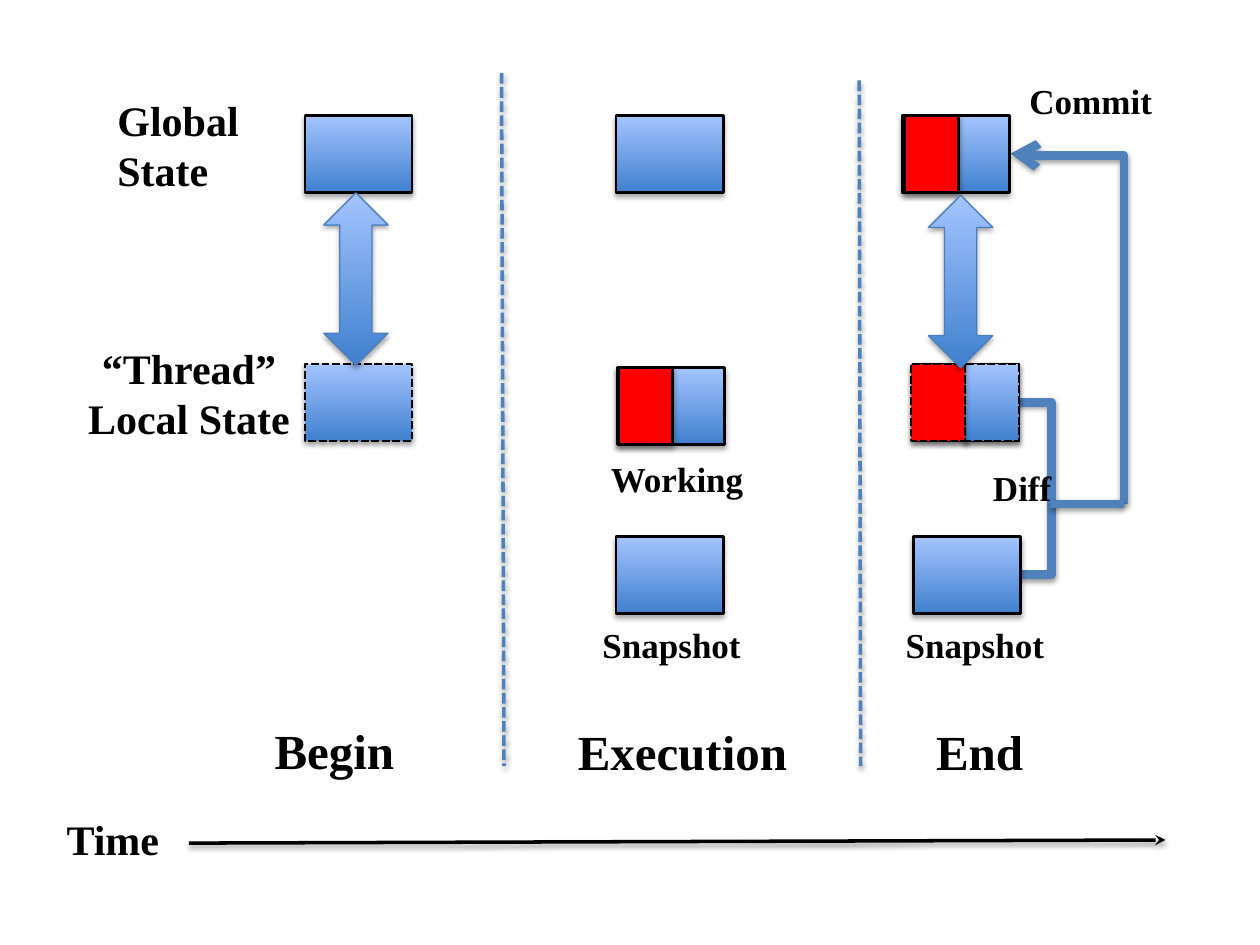
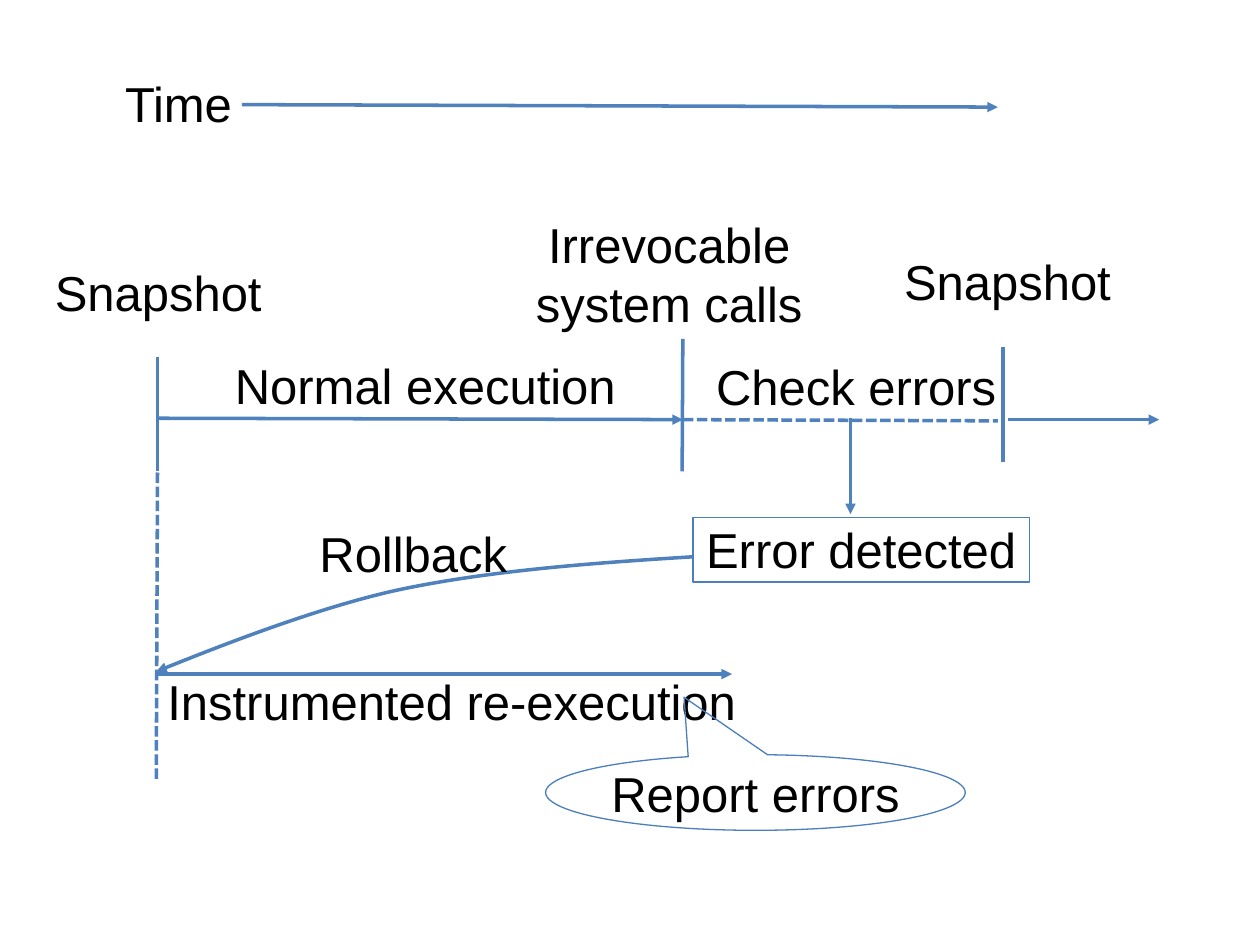
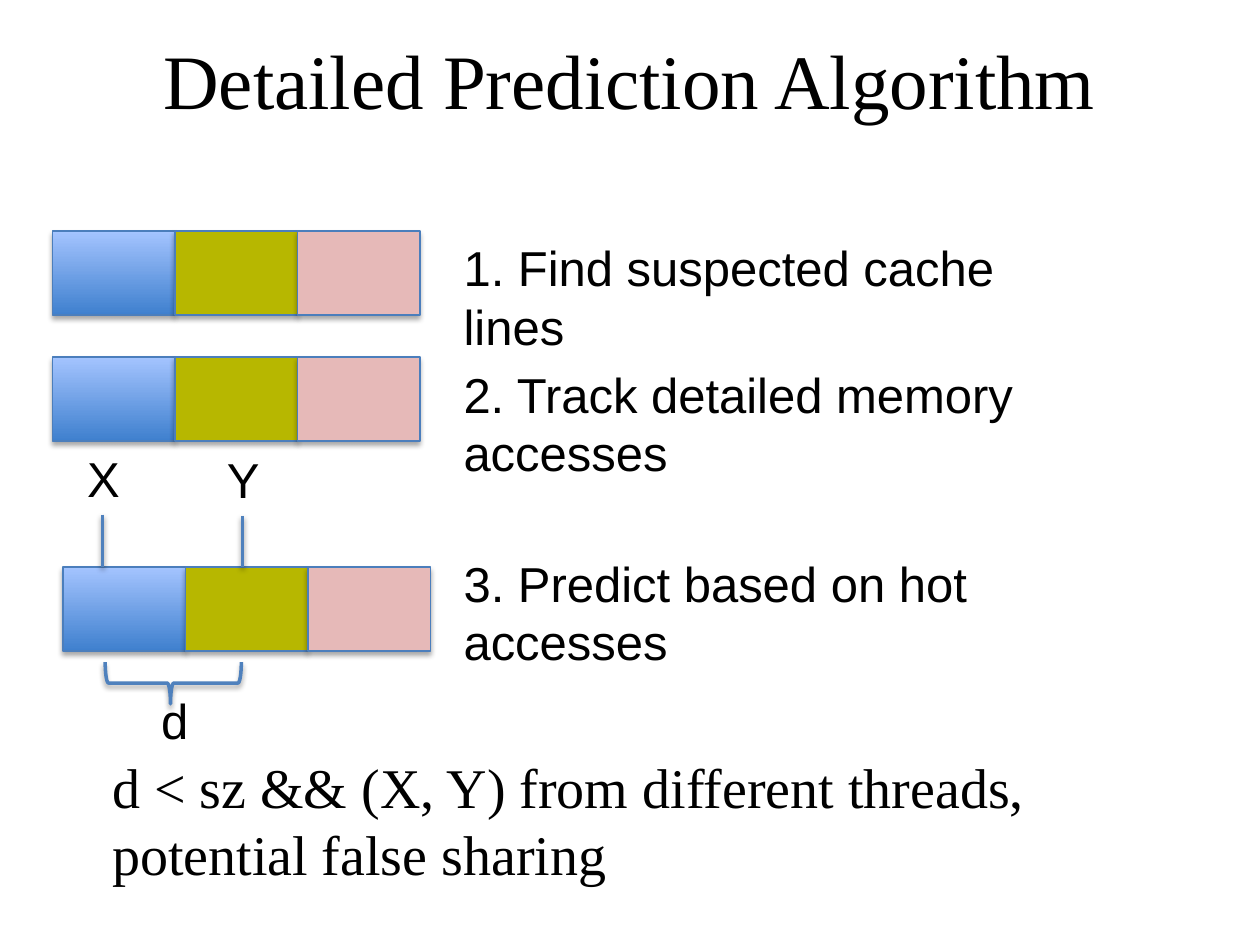
from dataclasses import dataclass

from pptx import Presentation
from pptx.dml.color import RGBColor
from pptx.enum.dml import MSO_LINE_DASH_STYLE as Dash
from pptx.enum.shapes import MSO_CONNECTOR_TYPE as Conn, MSO_SHAPE as Shape
from pptx.enum.text import MSO_ANCHOR as Anchor, PP_ALIGN as Align
from pptx.oxml import parse_xml
from pptx.oxml.ns import nsdecls, qn
from pptx.oxml.xmlchemy import OxmlElement
from pptx.util import Pt


@dataclass(frozen=True)
class Theme:
    ink: str = "000000"
    paper: str = "FFFFFF"
    accent: str = "4F81BD"
    edge: str = "4B7EBC"
    changed: str = "FF0000"
    olive: str = "B7B700"
    pink: str = "E6B9B8"
    blend: tuple = ("3F80CE", "A4C4FF")  # bottom, top
    serif: str = "Times New Roman"
    sans: str = "Arial"
    title: int = 44
    rule: int = 32
    body: int = 28
    label: int = 24
    note: int = 20
    shadow: str = (
        f'<a:effectLst {nsdecls("a")}><a:outerShdw blurRad="{Pt(3.1)}" dist="%d" '
        'dir="5400000" rotWithShape="0"><a:srgbClr val="000000">'
        '<a:alpha val="%d"/></a:srgbClr></a:outerShdw></a:effectLst>')


T = Theme()
INSET = (7.2, 3.6, 7.2, 3.6)
TIGHT = (0, 1.4, 0, 3.6)
SIDES = ("margin_left", "margin_top", "margin_right", "margin_bottom")


def block(s, at, text="", shape=None, fill=None, line=None, width=0.75, dash=None,
          shadow=False, size=T.body, font=T.sans, bold=False, align=Align.CENTER,
          anchor=Anchor.TOP, inset=INSET):
    """Add a preset shape, or a text box when no shape is given."""
    at = [Pt(v) for v in at]
    if shape is None:
        sp = s.shapes.add_textbox(*at)
    else:
        sp = s.shapes.add_shape(shape, *at)
        sp.shadow.inherit = False
        if fill == T.blend:
            sp.fill.gradient()
            sp.fill.gradient_angle = 90
            for stop, color in zip(sp.fill.gradient_stops, fill):
                stop.color.rgb = RGBColor.from_string(color)
        elif fill:
            sp.fill.solid()
            sp.fill.fore_color.rgb = RGBColor.from_string(fill)
        else:
            sp.fill.background()
        sp.line.color.rgb = RGBColor.from_string(line)
        sp.line.width = Pt(width)
        sp.line.dash_style = dash
        if shadow:
            effects = sp._element.spPr.find(qn("a:effectLst"))
            effects.append(parse_xml(T.shadow % (Pt(1.8), 35000))[0])
    if text:
        tf = sp.text_frame
        tf.text = text
        frame = {"word_wrap": True, "vertical_anchor": anchor}
        frame.update(zip(SIDES, map(Pt, inset)))
        for name, value in frame.items():
            setattr(tf, name, value)
        for p in tf.paragraphs:
            p.alignment = align
            for name, value in {"name": font, "size": Pt(size), "bold": bold}.items():
                setattr(p.runs[0].font, name, value)
            p.runs[0].font.color.rgb = RGBColor.from_string(T.ink)
    return sp


def link(s, ends, head=None, color=T.accent, width=2, dash=None, shadow=False,
         kind=Conn.STRAIGHT):
    """Add a connector from (x1, y1) to (x2, y2)."""
    sp = s.shapes.add_connector(kind, *[Pt(v) for v in ends])
    sp.line.color.rgb = RGBColor.from_string(color)
    sp.line.width = Pt(width)
    sp.line.dash_style = dash
    if head:
        tail = OxmlElement("a:tailEnd")
        tail.set("type", head)
        sp.line._get_or_add_ln().append(tail)
    effects = parse_xml(T.shadow % (Pt(1.6), 38000))
    if not shadow:
        effects.remove(effects[0])
    sp._element.spPr.append(effects)
    return sp


prs = Presentation()
prs.slide_width, prs.slide_height = Pt(720), Pt(540)
blank = prs.slide_layouts[6]

# ---- Slide 1: phases of a thread
s = prs.slides.add_slide(blank)

# Phase dividers and time axis
for ends in ((491, 46, 491.8, 437.8), (286.6, 41.8, 288, 437.8)):
    link(s, ends, dash=Dash.SQUARE_DOT, shadow=True)
link(s, (108, 481.8, 666, 480), "stealth", T.ink, shadow=True)

# Diff and commit paths, turned a quarter
elbows = [
    ((632.1, 278.6, 533.5, 279.5), None, "bentConnector4", (300, 2051800)),
    ((509.8, 220.3, 710, 155.5), "arrow", "bentConnector3", (99400,)),
]
for ends, head, preset, adjustments in elbows:
    sp = link(s, ends, head, width=5, shadow=True, kind=Conn.ELBOW)
    sp._element.spPr.find(qn("a:xfrm")).set("rot", "16200000")
    geom = sp._element.spPr.find(qn("a:prstGeom"))
    geom.set("prst", preset)
    guides = geom.find(qn("a:avLst"))
    for i, value in enumerate(adjustments, 1):
        gd = OxmlElement("a:gd")
        gd.set("name", f"adj{i}")
        gd.set("fmla", f"val {value}")
        guides.append(gd)
link(s, (600, 288, 642.2, 288), width=5, shadow=True)

# Memory states
full, half, tall = 61.2, 30.8, 44
top, local, snap = 66.2, 208.1, 306.7
states = [
    (174.2, top, full, T.blend, None),
    (174.2, local, full, T.blend, Dash.SQUARE_DOT),
    (352.1, top, full, T.blend, None),
    (352.8, 210.2, full, T.blend, None),
    (353.5, 210.2, half, T.changed, None),
    (352.1, snap, full, T.blend, None),
    (515.5, top, full, T.blend, None),
    (517, top, half, T.changed, None),
    (551.5, local, half, T.blend, None),
    (522, local, half, T.changed, None),
    (551.5, local, half, T.blend, Dash.SQUARE_DOT),
    (520.6, local, half, T.changed, Dash.SQUARE_DOT),
    (522, snap, full, T.blend, None),
]
for x, y, w, fill, dash in states:
    block(s, (x, y, w, tall), shape=Shape.RECTANGLE, fill=fill, line=T.ink,
          width=1.5, dash=dash, shadow=True)
for x, y in ((185, 110.2), (530.6, 111.6)):
    block(s, (x, y, 36.8, 98.6), shape=Shape.UP_DOWN_ARROW, fill=T.blend,
          line=T.edge, shadow=True)

# Labels
flush = (0, 3.6, 0, 3.6)
labels = [
    ("End", (527.8, 409, 96, 41), T.body, Align.LEFT, INSET),
    ("Begin", (149.8, 408.2, 114, 41), T.body, Align.LEFT, INSET),
    ("Execution", (300, 409, 180, 41), T.body, Align.CENTER, INSET),
    ("Time", (18, 461.5, 93, 36), T.label, Align.CENTER, INSET),
    ("Global State", (60, 50.4, 102, 65.5), T.label, Align.LEFT, INSET),
    ("“Thread”\nLocal State", (36, 192.2, 144, 65.5), T.label, Align.CENTER, INSET),
    ("Diff", (567.4, 262.8, 57, 31.7), T.note, Align.LEFT, flush),
    ("Commit", (588.2, 41.8, 90, 31.7), T.note, Align.LEFT, flush),
    ("Working", (342, 257.8, 114, 31.7), T.note, Align.LEFT, INSET),
    ("Snapshot", (329.8, 352.8, 108, 31.7), T.note, Align.CENTER, INSET),
    ("Snapshot", (510.5, 352.8, 119.5, 31.7), T.note, Align.LEFT, INSET),
]
for text, at, size, align, inset in labels:
    block(s, at, text, size=size, font=T.serif, bold=True, align=align, inset=inset)

# ---- Slide 2: rollback timeline
s = prs.slides.add_slide(blank)

# Time marks and flows
marks = [
    ((90, 203.8, 90, 269.3), None),
    ((390.2, 193.7, 389.8, 269.3), None),
    ((573.1, 198, 573.1, 264.2), None),
    ((90, 270, 89.3, 446.4), Dash.SQUARE_DOT),
    ((390.2, 239.8, 570.2, 240.5), Dash.SQUARE_DOT),
]
for ends, dash in marks:
    link(s, ends, dash=dash)
flows = [
    (138.2, 59.8, 570.2, 61.2),
    (90, 239, 390.2, 239.8),
    (576, 239.8, 662.4, 239.8),
    (486, 239, 486, 293.8),
    (90, 385.2, 418.3, 385.2),
]
for ends in flows:
    link(s, ends, "triangle")

# Rollback curve: each three points after the start make one Bezier segment
start, *points = [(396, 318.2), (337.7, 321.8), (279.4, 326.2), (228.2, 337),
                  (177.8, 347.8), (89.3, 383.8), (89.3, 383.8)]
fb = s.shapes.build_freeform(Pt(start[0]), Pt(start[1]))
fb.add_line_segments([(Pt(x), Pt(y)) for x, y in points], close=False)
sp = fb.convert_to_shape()
sp.shadow.inherit = False
sp.fill.background()
sp.line.color.rgb = RGBColor.from_string(T.accent)
sp.line.width = Pt(2)
tail = OxmlElement("a:tailEnd")
tail.set("type", "triangle")
sp.line._get_or_add_ln().append(tail)
outline = sp._element.find(".//" + qn("a:path"))
legs = outline.findall(qn("a:lnTo"))
for i in range(0, len(legs), 3):
    curve = OxmlElement("a:cubicBezTo")
    for leg in legs[i:i + 3]:
        curve.append(leg[0])
        outline.remove(leg)
    outline.append(curve)

# Labels
captions = [
    ("Time", (54, 41.8, 96, 36)),
    ("Snapshot", (18, 144, 144.7, 47.5)),
    ("Snapshot", (503.3, 131.8, 144.7, 59.8)),
    ("Normal execution", (90, 203, 306, 36)),
    ("Check errors", (408.2, 203, 162, 36.7)),
    ("Rollback", (176.4, 300.2, 119.5, 33.8)),
    ("Instrumented re-execution", (90, 383.8, 336.2, 36)),
]
for text, at in captions:
    block(s, at, text, anchor=Anchor.MIDDLE, inset=TIGHT)
sp = block(s, (306, 120.2, 167.8, 74.2), "Irrevocable\nsystem calls",
           anchor=Anchor.MIDDLE, inset=TIGHT)
sp.text_frame.paragraphs[0]._p.get_or_add_pPr().set("marR", str(Pt(15)))

# Outcome boxes
block(s, (396, 295.9, 192.2, 36.7), "Error detected", Shape.RECTANGLE, T.paper,
      T.edge, anchor=Anchor.MIDDLE, inset=(7.2, 2.9, 7.2, 3.6))
sp = block(s, (311.8, 431.3, 239.8, 43.2), "Report errors", Shape.OVAL_CALLOUT,
           line=T.edge, anchor=Anchor.MIDDLE, inset=flush)
sp.adjustments[0], sp.adjustments[1] = -0.17, -1.26

# ---- Slide 3: prediction algorithm
s = prs.slides.add_slide(blank)
block(s, (0, 0, 720, 90), "Detailed Prediction Algorithm", size=T.title,
      font=T.serif, anchor=Anchor.MIDDLE)

# Cache lines of three words
word = 70
for x, y in ((30, 132), (30, 204), (36, 324)):
    for i, fill in enumerate((T.blend, T.olive, T.pink)):
        block(s, (x + i * word, y, word, 48), shape=Shape.RECTANGLE, fill=fill,
              line=T.edge, shadow=True)

# Steps
steps = [
    ("1. Find suspected cache lines", 132, 351.4),
    ("2. Track detailed memory accesses", 204.5, 410.4),
    ("3. Predict based on hot accesses", 312.5, 385.2),
]
for text, y, w in steps:
    block(s, (257.8, y, w, 41), text, align=Align.LEFT)

# Hot words and their distance
for text, x, y in (("X", 41.8, 252.7), ("Y", 121.7, 253.4)):
    block(s, (x, y, 34.6, 41), text)
    link(s, (x + 16.8, y + 41.4, x + 16.8, 324), shadow=True)
sp = block(s, (87.1, 351.4, 23.8, 77.8), shape=Shape.LEFT_BRACE, line=T.accent,
           width=2, shadow=True)
sp.rotation = 270
sp.adjustments[0], sp.adjustments[1] = 0.08, 0.48
block(s, (85, 391, 29.5, 41), "d")

# Rule for false sharing
sp = block(s, (30, 426.2, 648, 90),
           "d < sz && (X, Y) from different threads, potential false sharing",
           size=T.rule, font=T.serif, align=Align.LEFT)
p = sp.text_frame.paragraphs[0]
p.space_before = Pt(4)
p._p.get_or_add_pPr().set("marL", str(Pt(27)))

prs.save("out.pptx")
